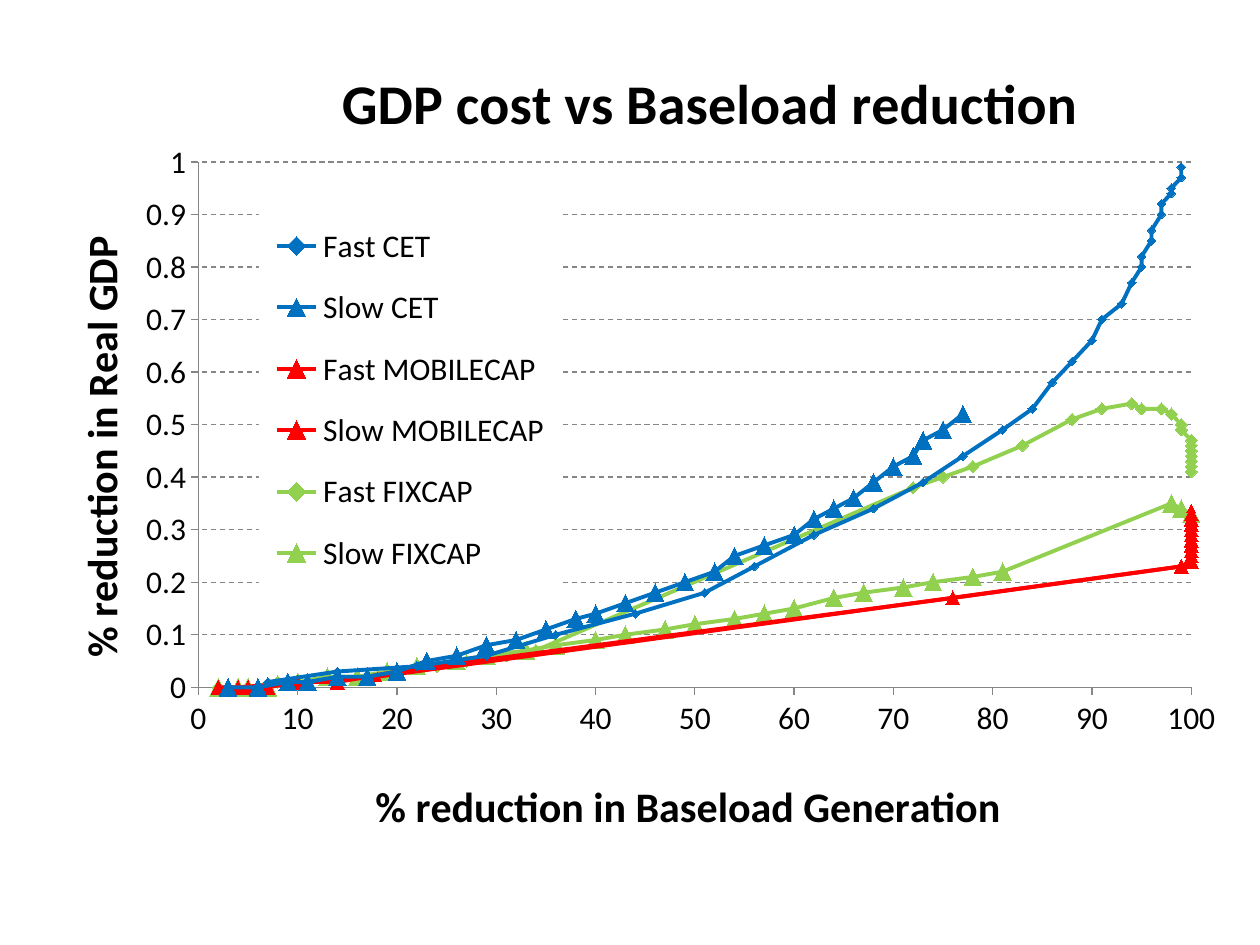
from itertools import pairwise

from pptx import Presentation
from pptx.chart.data import XyChartData
from pptx.dml.color import RGBColor
from pptx.enum.chart import XL_CHART_TYPE as ChartType
from pptx.enum.chart import XL_LEGEND_POSITION as LegendPosition
from pptx.enum.chart import XL_MARKER_STYLE as Marker
from pptx.enum.chart import XL_TICK_MARK as TickMark
from pptx.enum.dml import MSO_LINE_DASH_STYLE as Dash
from pptx.oxml import parse_xml
from pptx.oxml.ns import nsdecls, qn
from pptx.util import Inches, Pt

BLACK = RGBColor(0x00, 0x00, 0x00)
GREY = RGBColor(0x86, 0x86, 0x86)
BLUE = RGBColor(0x00, 0x70, 0xC0)
RED = RGBColor(0xFF, 0x00, 0x00)
GREEN = RGBColor(0x92, 0xD0, 0x50)
FONT = "Calibri"

TITLE = "GDP cost vs Baseload reduction"
BASELOAD_TITLE = "% reduction in Baseload Generation"
GDP_TITLE = "% reduction in Real GDP"

SCENARIOS = [
    ("Fast CET", BLUE, Marker.DIAMOND, 5,
     [(0, 7, 0.01), (3, 29, 0.06), (6, 51, 0.18), (10, 73, 0.39), (12, 81, 0.49),
      (14, 86, 0.58), (16, 90, 0.66), (19, 94, 0.77), (24, 97, 0.9), (29, 99, 0.99)]),
    ("Slow CET", BLUE, Marker.TRIANGLE, 10,
     [(0, 3, 0), (5, 17, 0.02), (10, 32, 0.09), (15, 46, 0.18),
      (20, 60, 0.29), (24, 68, 0.39), (29, 77, 0.52)]),
    ("Fast MOBILECAP", RED, Marker.TRIANGLE, 5,
     [(0, 4, 0), (2, 18, 0.02), (3, 99, 0.23), (4, 100, 0.24),
      (14, 100, 0.29), (29, 100, 0.34)]),
    ("Slow MOBILECAP", RED, Marker.TRIANGLE, 8,
     [(0, 2, 0), (3, 7, 0), (7, 20, 0.03), (8, 76, 0.17), (9, 99, 0.23),
      (10, 100, 0.24), (18, 100, 0.29), (29, 100, 0.33)]),
    ("Fast FIXCAP", GREEN, Marker.DIAMOND, 7,
     [(0, 2, 0), (5, 17, 0.02), (10, 34, 0.07), (11, 72, 0.38), (13, 78, 0.42),
      (15, 88, 0.51), (17, 94, 0.54), (20, 98, 0.52), (23, 100, 0.47), (29, 100, 0.41)]),
    ("Slow FIXCAP", GREEN, Marker.TRIANGLE, 10,
     [(0, 2, 0), (3, 7, 0), (8, 22, 0.04), (13, 40, 0.09),
      (25, 81, 0.22), (26, 98, 0.35), (29, 100, 0.33)]),
]


def yearly_points(knots):
    for (start, x0, y0), (end, x1, y1) in pairwise(knots):
        for year in range(start, end):
            share = (year - start) / (end - start)
            yield round(x0 + share * (x1 - x0)), round(y0 + share * (y1 - y0), 2)
    yield knots[-1][1:]


def style_font(font, size, bold=False):
    font.name, font.size, font.bold = FONT, Pt(size), bold
    font.color.rgb = BLACK


def place(element, x, y, w=None, h=None, inner=False):
    for old in element.findall(qn("c:layout")):
        element.remove(old)
    target = '<c:layoutTarget val="inner"/>' if inner else ""
    sizes = f'<c:w val="{w}"/><c:h val="{h}"/>' if w else ""
    layout = parse_xml(
        f'<c:layout {nsdecls("c")}><c:manualLayout>{target}'
        f'<c:xMode val="edge"/><c:yMode val="edge"/>'
        f'<c:x val="{x}"/><c:y val="{y}"/>{sizes}</c:manualLayout></c:layout>')
    leading = (qn("c:tx"), qn("c:legendPos"))
    element.insert(sum(child.tag in leading for child in element), layout)


def add_title(owner, text, size, x, y):
    frame = owner.text_frame
    frame.text = text
    style_font(frame.paragraphs[0].runs[0].font, size, True)
    place(frame._txBody.getparent().getparent(), x, y)


def style_axis(axis, top, step):
    axis.minimum_scale, axis.maximum_scale, axis.major_unit = 0, top, step
    axis.major_tick_mark, axis.minor_tick_mark = TickMark.OUTSIDE, TickMark.NONE
    axis.format.line.color.rgb = GREY
    axis.format.line.width = Pt(0.75)
    style_font(axis.tick_labels.font, 18)


deck = Presentation()
deck.slide_width, deck.slide_height = Inches(10), Inches(7.5)
slide = deck.slides.add_slide(deck.slide_layouts[6])

costs = XyChartData()
for name, _, _, _, knots in SCENARIOS:
    scenario = costs.add_series(name)
    for baseload, gdp in yearly_points(knots):
        scenario.add_data_point(baseload, gdp)

chart = slide.shapes.add_chart(
    ChartType.XY_SCATTER_SMOOTH, Inches(0.23), Inches(0.16),
    Inches(9.61), Inches(6.62), costs).chart
style_font(chart.font, 10)
place(chart.plots[0]._element.getparent(), 0.14, 0.17, 0.82, 0.63, inner=True)

for curve, (_, color, marker, size, _) in zip(chart.plots[0].series, SCENARIOS):
    curve.smooth = True
    curve.format.line.color.rgb = color
    curve.format.line.width = Pt(2.25)
    curve.marker.style, curve.marker.size = marker, size
    curve.marker.format.fill.solid()
    curve.marker.format.fill.fore_color.rgb = color
    curve.marker.format.line.color.rgb = color

baseload_axis, gdp_axis = chart.category_axis, chart.value_axis
style_axis(baseload_axis, 100, 10)
style_axis(gdp_axis, 1, 0.1)
baseload_axis.has_major_gridlines = False
gdp_axis.has_major_gridlines = True
grid = gdp_axis.major_gridlines.format.line
grid.color.rgb, grid.width, grid.dash_style = GREY, Pt(0.75), Dash.DASH

add_title(chart.chart_title, TITLE, 32, 0.25, 0.04)
add_title(baseload_axis.axis_title, BASELOAD_TITLE, 24, 0.28, 0.9)
add_title(gdp_axis.axis_title, GDP_TITLE, 24, 0.03, 0.25)
gdp_axis.axis_title.text_frame._txBody.find(qn("a:bodyPr")).set("rot", "-5400000")

chart.has_legend = True
legend = chart.legend
legend.position = LegendPosition.RIGHT
legend.include_in_layout = True
style_font(legend.font, 18)
place(legend._element, 0.19, 0.22, 0.25, 0.47)
legend._element.find(qn("c:txPr")).addprevious(parse_xml(
    f'<c:spPr {nsdecls("c", "a")}><a:solidFill><a:srgbClr val="FFFFFF"/>'
    '</a:solidFill><a:ln><a:noFill/></a:ln></c:spPr>'))

deck.save("out.pptx")
